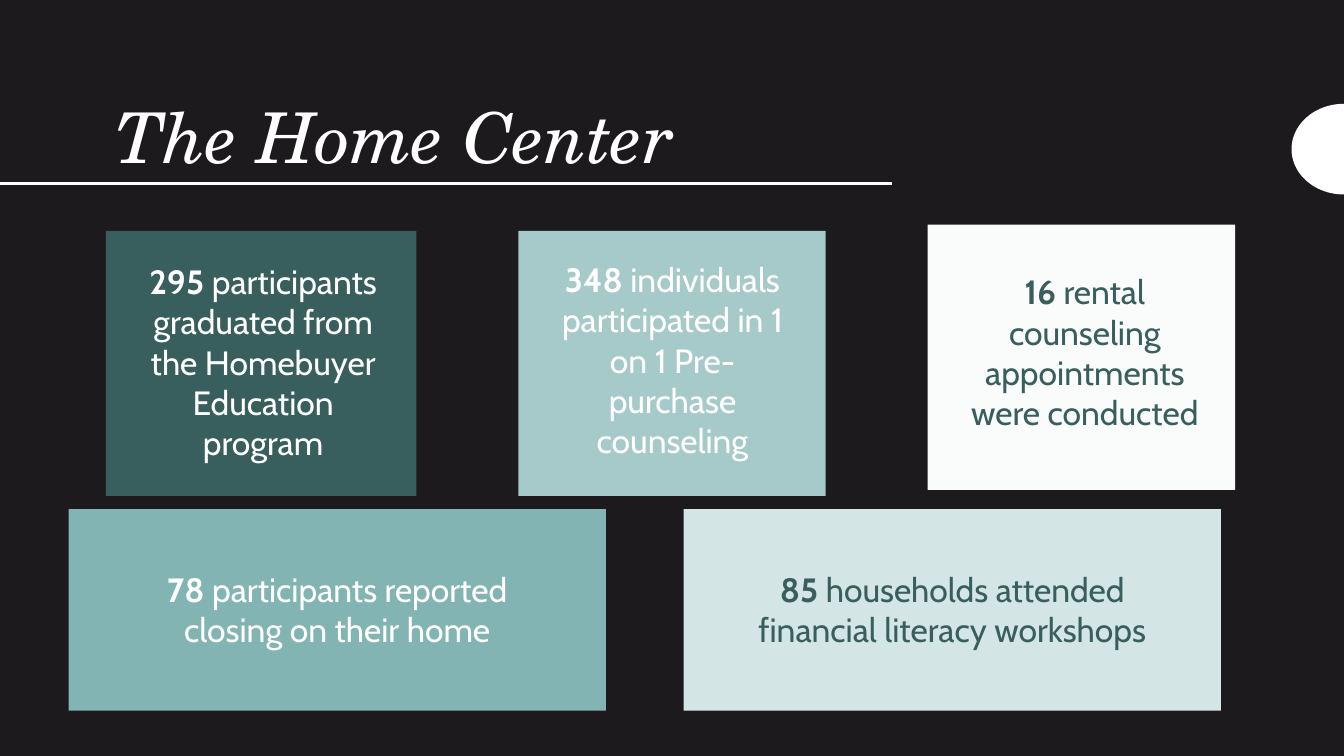
from lxml import etree
from pptx import Presentation
from pptx.dml.color import RGBColor
from pptx.enum.shapes import MSO_CONNECTOR, MSO_SHAPE
from pptx.enum.text import MSO_ANCHOR, PP_ALIGN
from pptx.oxml.ns import qn
from pptx.util import Pt

PX = 9144
RECTANGLE = MSO_SHAPE.RECTANGLE
OVAL = MSO_SHAPE.OVAL
STRAIGHT = MSO_CONNECTOR.STRAIGHT
BOTTOM = MSO_ANCHOR.BOTTOM
CENTER = PP_ALIGN.CENTER

NIGHT = RGBColor(0x1D, 0x1A, 0x1D)
WHITE = RGBColor(0xFF, 0xFF, 0xFF)
PINE = RGBColor(0x38, 0x5E, 0x5D)
TEAL = RGBColor(0x82, 0xB4, 0xB3)
AQUA = RGBColor(0xA6, 0xCA, 0xC9)
MIST = RGBColor(0xD3, 0xE5, 0xE4)
SNOW = RGBColor(0xFA, 0xFC, 0xFC)


def add_filled(kind, bounds, color):
    shape = page.shapes.add_shape(kind, *[value * PX for value in bounds])
    shape.shadow.inherit = False
    shape.fill.solid()
    shape.fill.fore_color.rgb = color
    shape.line.fill.background()


def add_text(bounds, words, font_name, size, color):
    box = page.shapes.add_textbox(*[value * PX for value in bounds])
    box.text_frame.word_wrap = True
    para = box.text_frame.paragraphs[0]
    for word in words:
        span = para.add_run()
        span.text = word
        span.font.name = font_name
        span.font.size = Pt(size)
        span.font.color.rgb = color
    return box.text_frame


deck = Presentation()
deck.slide_width = 1333 * PX
deck.slide_height = 750 * PX
page = deck.slides.add_slide(deck.slide_layouts[6])
page.background.fill.solid()
page.background.fill.fore_color.rgb = NIGHT

title = add_text((105, 47, 992, 135), ["The Home Center"], "TeX Gyre Schola", 50, WHITE)
title.vertical_anchor = BOTTOM
title.paragraphs[0].line_spacing = 0.9
title.paragraphs[0].runs[0].font.italic = True

add_filled(OVAL, (1281, 103, 104, 90), WHITE)

rule = page.shapes.add_connector(STRAIGHT, 0, 182 * PX, 885 * PX, 182 * PX)
rule.line.color.rgb = WHITE
rule.line.width = Pt(2.25)
etree.SubElement(rule._element.spPr, qn("a:effectLst"))

cards = [
    ((105, 229, 308, 263), PINE, (129, 254, 264, 212), WHITE,
     "295 ", "participants graduated from the Homebuyer Education program"),
    ((514, 229, 305, 263), AQUA, (535, 252, 264, 212), WHITE,
     "348 ", "individuals participated in 1 on 1 Pre-purchase counseling"),
    ((920, 223, 305, 263), SNOW, (944, 264, 264, 172), PINE,
     "16 ", "rental counseling appointments were conducted"),
    ((68, 505, 533, 200), TEAL, (120, 559, 429, 91), WHITE,
     "78 ", "participants reported closing on their home"),
    ((678, 505, 533, 200), MIST, (730, 559, 429, 91), PINE,
     "85 ", "households attended financial literacy workshops"),
]
for card_bounds, fill_color, text_bounds, text_color, count, label in cards:
    add_filled(RECTANGLE, card_bounds, fill_color)
    para = add_text(text_bounds, [count, label], "Cabin", 24, text_color).paragraphs[0]
    para.alignment = CENTER
    para.runs[0].font.bold = True

deck.save("out.pptx")
